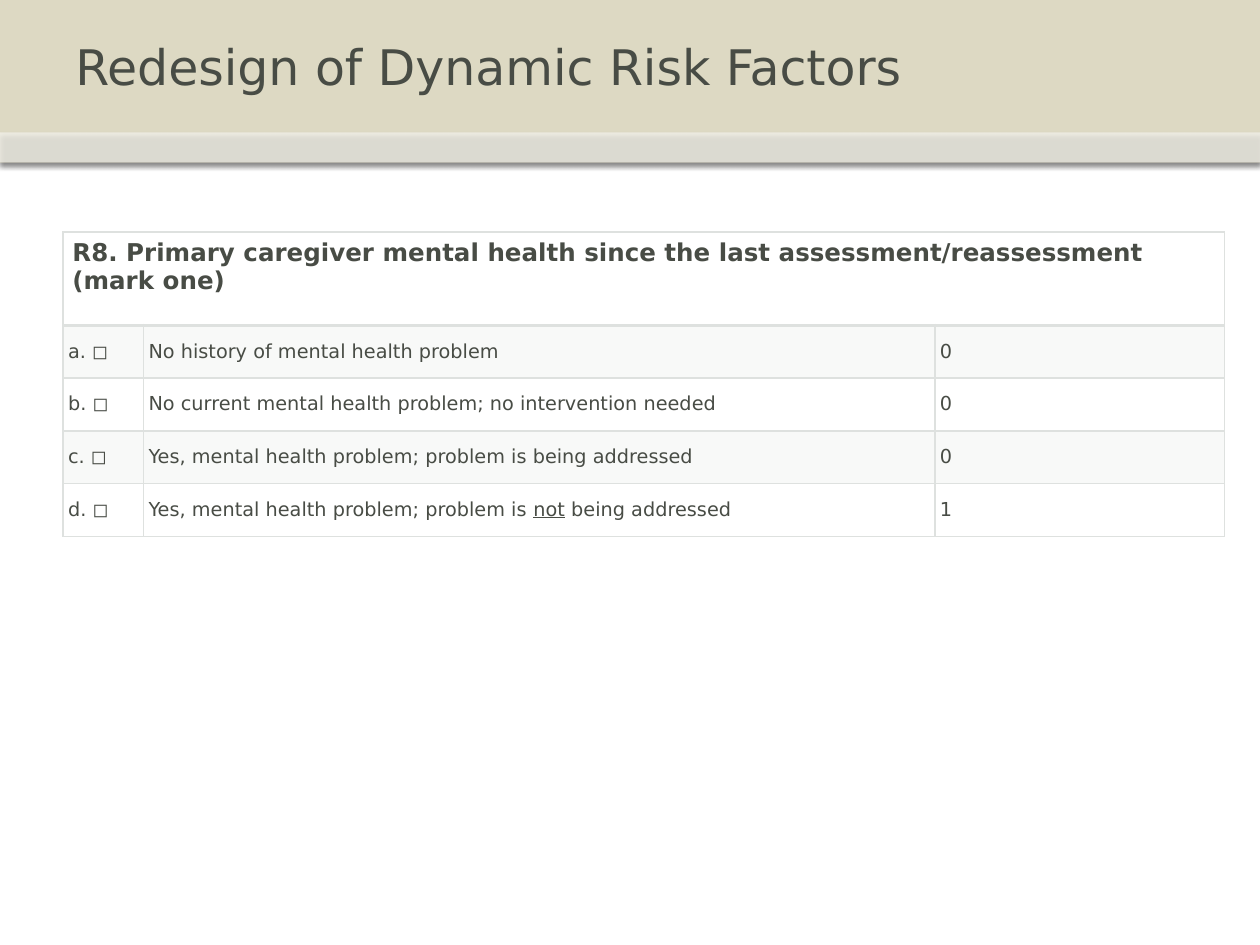
from lxml.etree import SubElement
from pptx import Presentation
from pptx.dml.color import RGBColor
from pptx.enum.shapes import MSO_SHAPE as Shape
from pptx.enum.text import MSO_ANCHOR as Anchor, PP_ALIGN as Align
from pptx.oxml.ns import qn
from pptx.util import Pt

FONT = "DejaVu Sans"
COLORS = {
    "text": "484C45",
    "banner": "DDD9C3",
    "strip": "FFFFFF",
    "grid": "DEE1DF",
    "shadow": "000000",
}
PAGE_WIDTH, PAGE_HEIGHT = 720, 540
BANNER_HEIGHT, TITLE_HEIGHT = 92.9, 75.6
COLUMNS = (46, 452.2, 165.6)
HEADER_HEIGHT, ROW_HEIGHT = 53.3, 30.2

QUESTION = ("R8. Primary caregiver mental health since the last "
            "assessment/reassessment (mark one)")
# Each answer is a list of text pieces; every second piece is underlined
ANSWERS = [
    ("a. ◻", ["No history of mental health problem"], "0"),
    ("b. ◻", ["No current mental health problem; no intervention needed"], "0"),
    ("c. ◻", ["Yes, mental health problem; problem is being addressed"], "0"),
    ("d. ◻", ["Yes, mental health problem; problem is ", "not",
              " being addressed"], "1"),
]


def color(name):
    return RGBColor.from_string(COLORS[name])


def add_xml_color(parent, name, opacity=100):
    node = SubElement(parent, qn("a:srgbClr"), val=COLORS[name])
    SubElement(node, qn("a:alpha"), val=str(opacity * 1000))


def set_fill(fill, owner, name, opacity=100):
    fill.solid()
    fill.fore_color.rgb = color(name)
    if opacity < 100:
        node = owner.find(qn("a:solidFill")).find(qn("a:srgbClr"))
        SubElement(node, qn("a:alpha"), val=str(opacity * 1000))


def write_text(frame, pieces, size=11, bold=False, align=Align.LEFT,
               anchor=Anchor.MIDDLE):
    frame.word_wrap = True
    frame.vertical_anchor = anchor
    para = frame.paragraphs[0]
    para.alignment = align
    for index, piece in enumerate(pieces):
        span = para.add_run()
        span.text = piece
        span.font.name = FONT
        span.font.size = Pt(size)
        span.font.bold = bold
        span.font.underline = index % 2 == 1
        span.font.color.rgb = color("text")


def add_band(page, top, height, name, opacity=100):
    band = page.shapes.add_shape(Shape.RECTANGLE, Pt(0), Pt(top),
                                 Pt(PAGE_WIDTH), Pt(height))
    set_fill(band.fill, band.element.spPr, name, opacity)
    band.line.fill.background()
    band.shadow.inherit = False
    effects = band.element.spPr.find(qn("a:effectLst"))
    shadow = SubElement(effects, qn("a:outerShdw"), blurRad=str(Pt(3.1)),
                        dist=str(Pt(1.8)), dir="5400000", rotWithShape="0")
    add_xml_color(shadow, "shadow", 35)


def add_title(page, text):
    box = page.shapes.add_textbox(Pt(36), Pt(0), Pt(648), Pt(TITLE_HEIGHT))
    write_text(box.text_frame, [text], size=28)


def set_borders(cell, top=1, bottom=1):
    props = cell._tc.get_or_add_tcPr()
    for side, width in (("L", 1), ("R", 1), ("T", top), ("B", bottom)):
        line = SubElement(props, qn(f"a:ln{side}"), w=str(Pt(width)))
        add_xml_color(SubElement(line, qn("a:solidFill")), "grid")


def set_margins(cell, side, end):
    cell.margin_left = cell.margin_right = Pt(side)
    cell.margin_top = cell.margin_bottom = Pt(end)


def add_question_table(page):
    height = HEADER_HEIGHT + ROW_HEIGHT * len(ANSWERS)
    table = page.shapes.add_table(len(ANSWERS) + 1, len(COLUMNS), Pt(36),
                                  Pt(132.5), Pt(sum(COLUMNS)), Pt(height)).table
    table.first_row = table.horz_banding = False
    for column, width in zip(table.columns, COLUMNS):
        column.width = Pt(width)
    for index, row in enumerate(table.rows):
        row.height = Pt(ROW_HEIGHT if index else HEADER_HEIGHT)

    # Question across all columns
    header = table.cell(0, 0)
    header.merge(table.cell(0, len(COLUMNS) - 1))
    for cell in table.rows[0].cells:
        set_borders(cell, bottom=2)
        cell.fill.background()
    set_margins(header, 5.4, 3.6)
    write_text(header.text_frame, [QUESTION], size=14, bold=True,
               anchor=Anchor.TOP)
    header.vertical_anchor = Anchor.TOP

    # Answers with their scores, every other row tinted
    for index, (mark, answer, score) in enumerate(ANSWERS, 1):
        for cell, pieces in zip(table.rows[index].cells,
                                ([mark], answer, [score])):
            set_borders(cell, top=2 if index == 1 else 1)
            if index % 2:
                set_fill(cell.fill, cell._tc.tcPr, "grid", 20)
            else:
                cell.fill.background()
            set_margins(cell, 2.9, 0)
            write_text(cell.text_frame, pieces, align=Align.JUSTIFY)
            cell.vertical_anchor = Anchor.MIDDLE


def main():
    deck = Presentation()
    deck.slide_width, deck.slide_height = Pt(PAGE_WIDTH), Pt(PAGE_HEIGHT)
    page = deck.slides.add_slide(deck.slide_layouts[6])

    # Banner with a pale strip along its lower edge
    add_band(page, 0, BANNER_HEIGHT, "banner")
    add_band(page, TITLE_HEIGHT, BANNER_HEIGHT - TITLE_HEIGHT, "strip", 53)

    add_title(page, "Redesign of Dynamic Risk Factors")
    add_question_table(page)
    deck.save("out.pptx")


if __name__ == "__main__":
    main()
